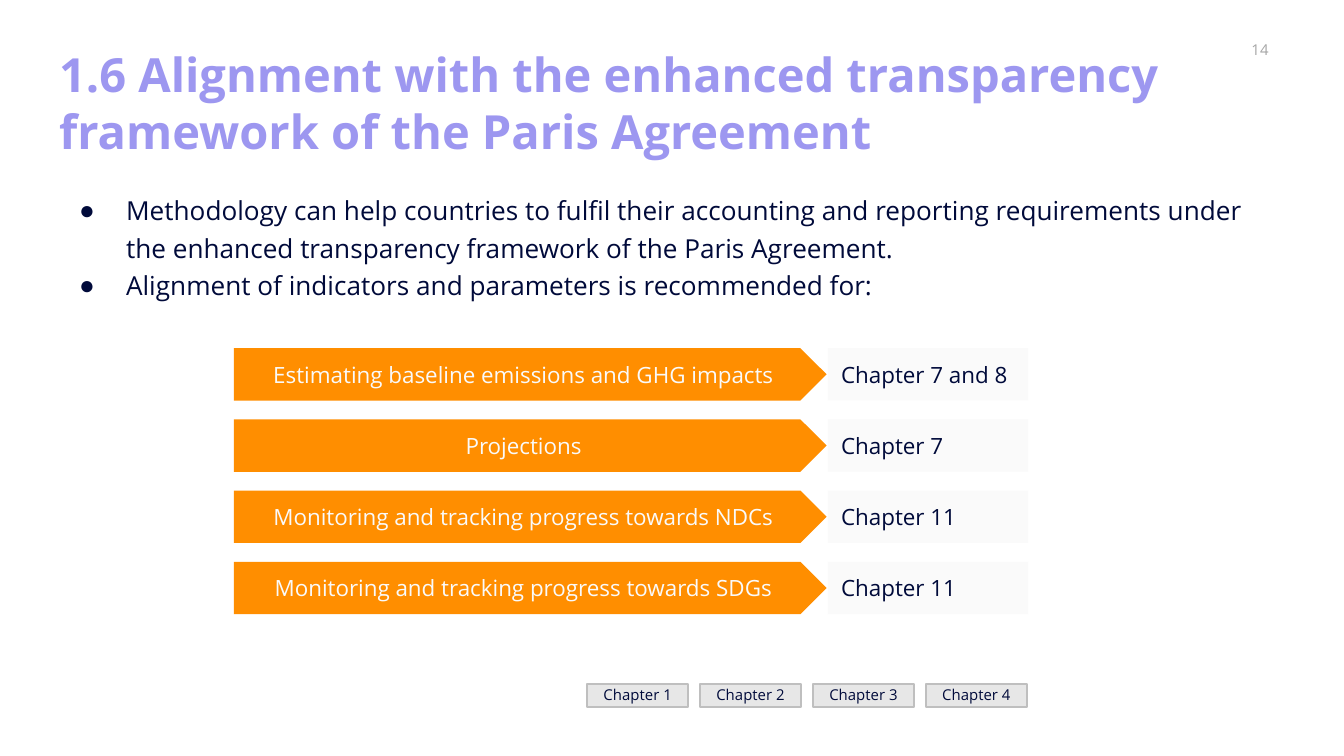
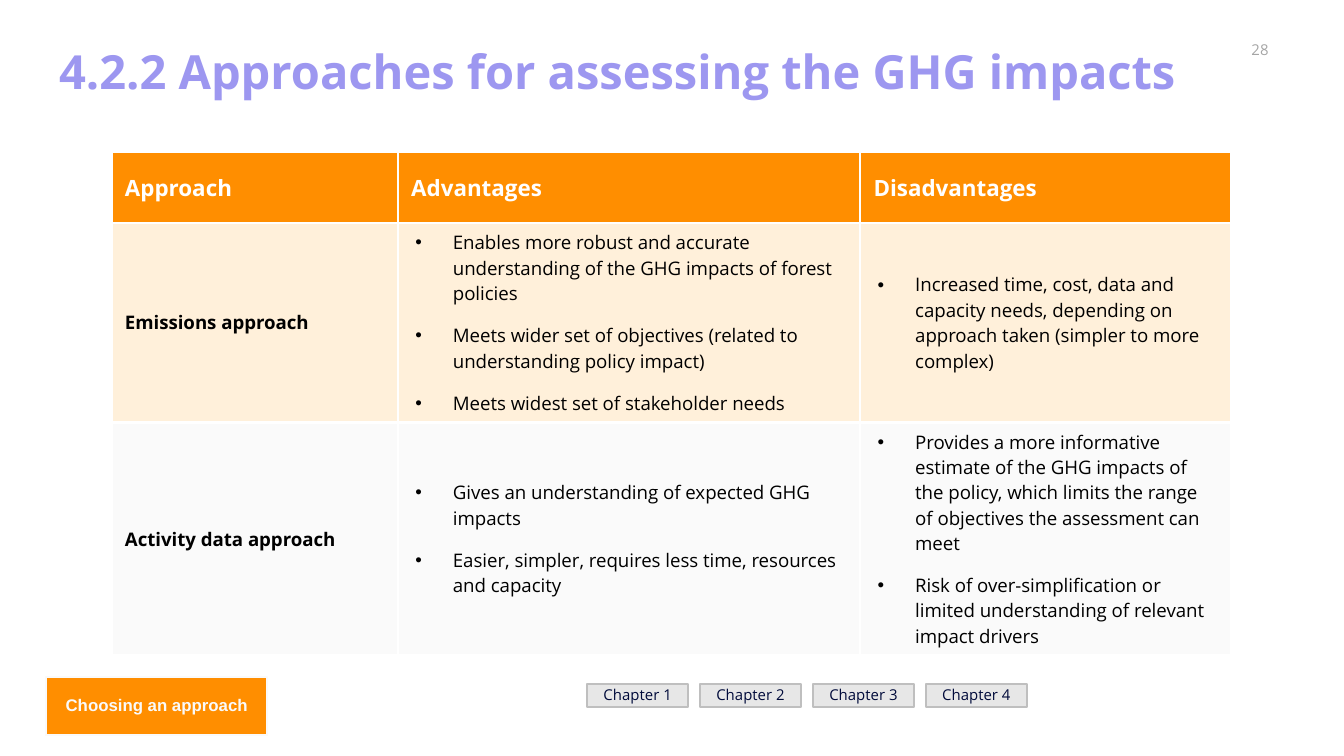
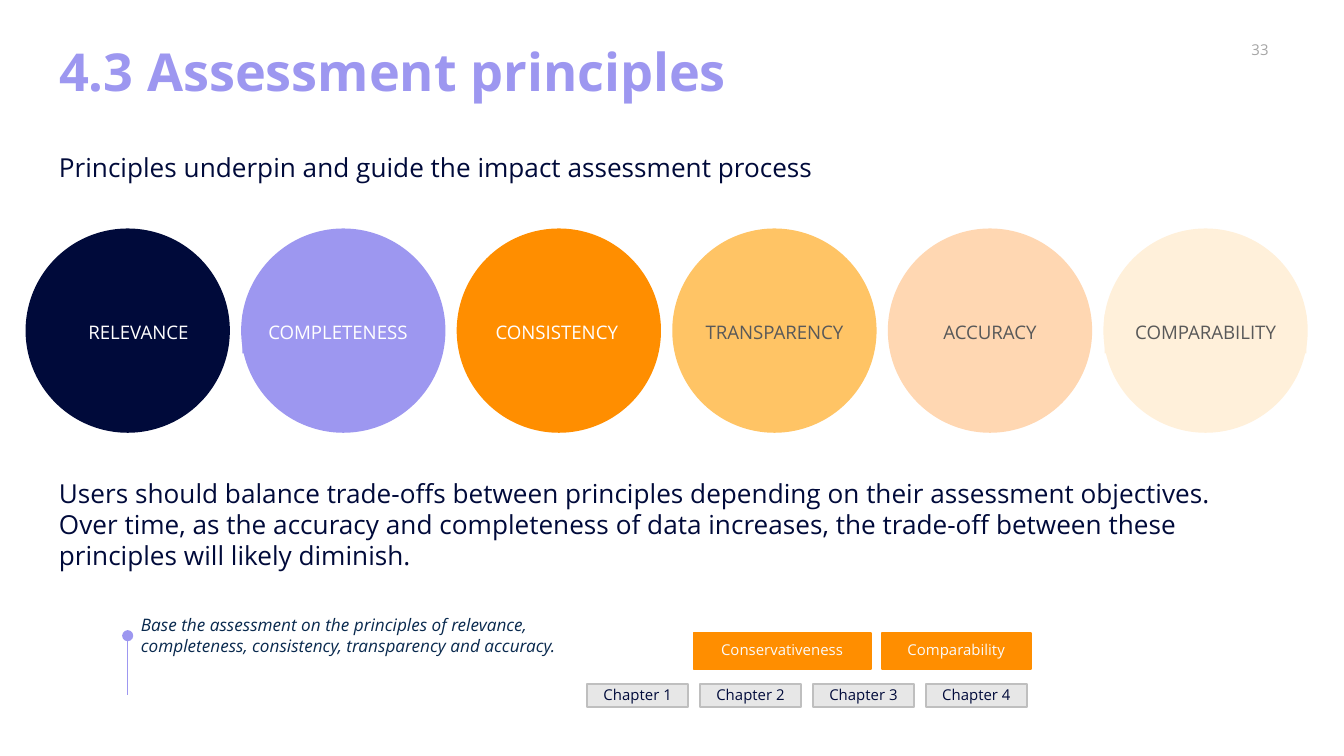
from typing import NamedTuple

from lxml.etree import SubElement
from pptx import Presentation
from pptx.dml.color import RGBColor
from pptx.enum.shapes import MSO_CONNECTOR, MSO_SHAPE
from pptx.enum.text import MSO_ANCHOR, MSO_AUTO_SIZE, PP_ALIGN
from pptx.oxml.ns import qn
from pptx.util import Inches, Pt

COLOURS = {
    "navy": "000A3A",
    "lilac": "9D97F0",
    "orange": "FF8E00",
    "amber": "FFC465",
    "peach": "FFD7B2",
    "cream": "FFF0DA",
    "paper": "FAFAFA",
    "white": "FFFFFF",
    "black": "000000",
    "charcoal": "595959",
    "ink": "09294E",
    "number": "A5A5A5",
    "button": "E7E7E7",
    "button edge": "BFBFBF",
}
FONT = "Open Sans"
BODY = {"size": 14, "colour": "navy"}


class Box(NamedTuple):
    left: float
    top: float
    width: float
    height: float

    def lengths(self):
        return [Inches(value) for value in self]


TITLE_BOX = Box(0.34, 0.24, 9.32, 0.63)
NUMBER_BOX = Box(8.98, 0.26, 0.79, 0.22)
CHAPTERS_BOX = Box(4.37, 5.09, 3.27, 0.17)


def rgb(name):
    return RGBColor.from_string(COLOURS[name])


def add_bullet(paragraph, char, colour, indent, hanging):
    properties = paragraph._p.get_or_add_pPr()
    properties.set("marL", str(Inches(indent)))
    properties.set("indent", str(-Inches(hanging)))
    bullet_colour = SubElement(properties, qn("a:buClr"))
    SubElement(bullet_colour, qn("a:srgbClr"), val=COLOURS[colour])
    SubElement(properties, qn("a:buFont"), typeface="Arial")
    SubElement(properties, qn("a:buChar"), char=char)


def write(frame, lines, size, colour, bullet=None, gap=0, spacing=1.0,
          align=PP_ALIGN.LEFT, **style):
    """Fill a text frame, one paragraph for each line, with gap points between."""
    for index, line in enumerate(lines):
        paragraph = frame.paragraphs[0] if index == 0 else frame.add_paragraph()
        if bullet:
            add_bullet(paragraph, **bullet)
        layout = {"alignment": align, "line_spacing": spacing,
                  "space_before": Pt(gap if index else 0)}
        for name, value in layout.items():
            setattr(paragraph, name, value)
        span = paragraph.add_run()
        span.text = line
        font = {"name": FONT, "size": Pt(size), "bold": False, **style}
        for name, value in font.items():
            setattr(span.font, name, value)
        span.font.color.rgb = rgb(colour)


def set_frame(frame, anchor, side=0.1, edge=0.05):
    settings = {
        "word_wrap": True,
        "auto_size": MSO_AUTO_SIZE.NONE,
        "vertical_anchor": anchor,
        "margin_left": Inches(side),
        "margin_right": Inches(side),
        "margin_top": Inches(edge),
        "margin_bottom": Inches(edge),
    }
    for name, value in settings.items():
        setattr(frame, name, value)


def add_text(page, box, lines, anchor=MSO_ANCHOR.TOP, side=0.1, edge=0.05, **text):
    frame = page.shapes.add_textbox(*box.lengths()).text_frame
    set_frame(frame, anchor, side, edge)
    write(frame, lines, **text)


def add_block(shapes, kind, box, fill, line=None, label=None,
              anchor=MSO_ANCHOR.MIDDLE, align=PP_ALIGN.CENTER, **text):
    """Draw a filled preset shape, with an outline and a label if given."""
    block = shapes.add_shape(kind, *box.lengths())
    block.shadow.inherit = False
    block.fill.solid()
    block.fill.fore_color.rgb = rgb(fill)
    if line:
        block.line.color.rgb = rgb(line)
        block.line.width = Pt(1)
    else:
        block.line.fill.background()
    if label:
        set_frame(block.text_frame, anchor)
        write(block.text_frame, [label], align=align, **text)


def add_chapter_buttons(page, box):
    width, pitch = 0.75, 0.84
    for index in range(4):
        place = Box(box.left + index * pitch, box.top, width, box.height)
        add_block(page.shapes, MSO_SHAPE.RECTANGLE, place, "button", "button edge",
                  f"Chapter {index + 1}", size=8, colour="navy", spacing=0.9)


def add_page(deck, title, number, size=25.2, anchor=MSO_ANCHOR.MIDDLE, edge=0.05,
             spacing=0.9):
    """Start a slide with the title, page number and chapter buttons all share."""
    page = deck.slides.add_slide(deck.slide_layouts[5])
    heading = page.shapes.title
    for name, value in zip(("left", "top", "width", "height"), TITLE_BOX.lengths()):
        setattr(heading, name, value)
    set_frame(heading.text_frame, anchor, edge=edge)
    write(heading.text_frame, [title], size, "lilac", spacing=spacing, bold=True)
    add_text(page, NUMBER_BOX, [number], MSO_ANCHOR.MIDDLE, side=0, edge=0,
             size=8, colour="number", align=PP_ALIGN.CENTER)
    add_chapter_buttons(page, CHAPTERS_BOX)
    return page


def add_alignment_rows(page, box, rows):
    """Stack arrows, each pointing at the chapters that cover its topic."""
    arrow_width, height, gap = 4.41, 0.39, 0.01
    pitch = (box.height - height) / (len(rows) - 1)
    chapter_left = box.left + arrow_width + gap
    chapter_width = box.width - arrow_width - gap
    for index, (topic, chapters) in enumerate(rows):
        top = box.top + index * pitch
        add_block(page.shapes, MSO_SHAPE.PENTAGON,
                  Box(box.left, top, arrow_width, height), "orange",
                  label=topic, size=12, colour="paper")
        add_block(page.shapes, MSO_SHAPE.RECTANGLE,
                  Box(chapter_left, top, chapter_width, height), "paper",
                  label=chapters, size=12, colour="navy", align=PP_ALIGN.LEFT)


def style_cell(cell, fill):
    properties = cell._tc.get_or_add_tcPr()
    for side in ("lnL", "lnR", "lnT", "lnB"):
        border = SubElement(properties, qn(f"a:{side}"), w=str(Pt(1.5)))
        paint = SubElement(border, qn("a:solidFill"))
        SubElement(paint, qn("a:srgbClr"), val=COLOURS["white"])
    cell.fill.solid()
    cell.fill.fore_color.rgb = rgb(fill)
    cell.vertical_anchor = MSO_ANCHOR.MIDDLE


def add_approach_table(page, box, header, rows):
    widths, heights = (2.13, 3.44, 2.76), (0.53, 1.48, 1.73)
    bullet = {"char": "•", "colour": "black", "indent": 0.31, "hanging": 0.28}
    header_text = {"size": 12, "colour": "white", "bold": True}
    name_text = {"size": 10, "colour": "black", "bold": True}
    list_text = {"size": 10, "colour": "black", "bullet": bullet, "gap": 9}
    table = page.shapes.add_table(len(heights), len(widths), *box.lengths()).table
    for column, width in zip(table.columns, widths):
        column.width = Inches(width)
    for row, height in zip(table.rows, heights):
        row.height = Inches(height)
    fills = ("orange", "cream", "paper")
    for row_index, (fill, contents) in enumerate(zip(fills, [header, *rows])):
        for column_index, lines in enumerate(contents):
            cell = table.cell(row_index, column_index)
            style_cell(cell, fill)
            body_text = list_text if column_index else name_text
            write(cell.text_frame, lines, **(body_text if row_index else header_text))


def add_principles(page, box, principles):
    """Spread circles over the box; each label has its own offset and width."""
    pitch = (box.width - box.height) / (len(principles) - 1)
    for index, (name, fill, colour, offset, width) in enumerate(principles):
        left = box.left + index * pitch
        shapes = page.shapes.add_group_shape().shapes
        add_block(shapes, MSO_SHAPE.OVAL, Box(left, box.top, box.height, box.height), fill)
        add_block(shapes, MSO_SHAPE.RECTANGLE,
                  Box(left + offset, box.top + 0.64, width, 0.29), fill,
                  label=name, anchor=MSO_ANCHOR.TOP, size=10, colour=colour)


def add_recommendation(page, box, advice):
    """Place advice in italics beside a stem with a round head."""
    add_text(page, Box(box.left, box.top, box.width, 0.41), [advice],
             MSO_ANCHOR.MIDDLE, size=9.2, colour="ink", italic=True)
    stem = page.shapes.add_connector(
        MSO_CONNECTOR.STRAIGHT, Inches(box.left), Inches(box.top + box.height),
        Inches(box.left), Inches(box.top + 0.21))
    stem.line.color.rgb = rgb("lilac")
    stem.line.width = Pt(0.75)
    SubElement(stem.line._get_or_add_ln(), qn("a:tailEnd"), type="oval")
    SubElement(stem._element.spPr, qn("a:effectLst"))


def build_alignment(deck):
    page = add_page(
        deck, "1.6 Alignment with the enhanced transparency framework of the Paris Agreement",
        "14", anchor=MSO_ANCHOR.TOP, edge=0.1, spacing=1.0)
    bullet = {"char": "●", "colour": "navy", "indent": 0.5, "hanging": 0.35}
    add_text(page, Box(0.34, 1.35, 9.1, 0.92), [
        "Methodology can help countries to fulfil their accounting and reporting "
        "requirements under the enhanced transparency framework of the Paris Agreement.",
        "Alignment of indicators and parameters is recommended for:",
    ], bullet=bullet, spacing=1.2, **BODY)
    add_alignment_rows(page, Box(1.74, 2.59, 5.91, 1.98), [
        ("Estimating baseline emissions and GHG impacts", "Chapter 7 and 8"),
        ("Projections", "Chapter 7"),
        ("Monitoring and tracking progress towards NDCs", "Chapter 11"),
        ("Monitoring and tracking progress towards SDGs", "Chapter 11"),
    ])


def build_approaches(deck):
    page = add_page(deck, "4.2.2 Approaches for assessing the GHG impacts", "28")
    add_block(page.shapes, MSO_SHAPE.RECTANGLE, Box(0.34, 5.04, 1.65, 0.43),
              "orange", "paper", "Choosing an approach", size=9, colour="paper",
              spacing=0.9, bold=True, name="Arial")
    header = (["Approach"], ["Advantages"], ["Disadvantages"])
    rows = [
        (["Emissions approach"],
         ["Enables more robust and accurate understanding of the GHG impacts of forest policies",
          "Meets wider set of objectives (related to understanding policy impact)",
          "Meets widest set of stakeholder needs"],
         ["Increased time, cost, data and capacity needs, depending on approach taken "
          "(simpler to more complex)"]),
        (["Activity data approach"],
         ["Gives an understanding of expected GHG impacts",
          "Easier, simpler, requires less time, resources and capacity"],
         ["Provides a more informative estimate of the GHG impacts of the policy, "
          "which limits the range of objectives the assessment can meet",
          "Risk of over-simplification or limited understanding of relevant impact drivers"]),
    ]
    add_approach_table(page, Box(0.83, 1.13, 8.33, 3.74), header, rows)


def build_principles(deck):
    page = add_page(deck, "4.3 Assessment principles", "33", size=28)
    add_text(page, Box(0.34, 1.08, 9.11, 0.85),
             ["Principles underpin and guide the impact assessment process"], **BODY)
    add_principles(page, Box(0.19, 1.7, 9.54, 1.52), [
        ("RELEVANCE", "navy", "white", 0.26, 1.16),
        ("COMPLETENESS", "lilac", "white", 0.01, 1.42),
        ("CONSISTENCY", "orange", "white", 0.06, 1.37),
        ("TRANSPARENCY", "amber", "charcoal", 0.05, 1.42),
        ("ACCURACY", "peach", "charcoal", 0.21, 1.1),
        ("COMPARABILITY", "cream", "charcoal", 0.01, 1.5),
    ])
    add_text(page, Box(0.34, 3.5, 9.11, 0.85), [
        "Users should balance trade-offs between principles depending on their "
        "assessment objectives.",
        "Over time, as the accuracy and completeness of data increases, the trade-off "
        "between these principles will likely diminish.",
    ], **BODY)
    add_recommendation(
        page, Box(0.95, 4.52, 3.38, 0.65),
        "Base the assessment on the principles of relevance, completeness, "
        "consistency, transparency and accuracy.")
    for label, left, width in (("Conservativeness", 5.16, 1.32), ("Comparability", 6.56, 1.11)):
        add_block(page.shapes, MSO_SHAPE.RECTANGLE, Box(left, 4.71, width, 0.27),
                  "orange", "orange", label, size=8, colour="paper", spacing=0.9)


def main():
    deck = Presentation()
    deck.slide_width = Inches(10)
    deck.slide_height = deck.slide_width * 9 // 16
    for build in (build_alignment, build_approaches, build_principles):
        build(deck)
    deck.save("out.pptx")


if __name__ == "__main__":
    main()
